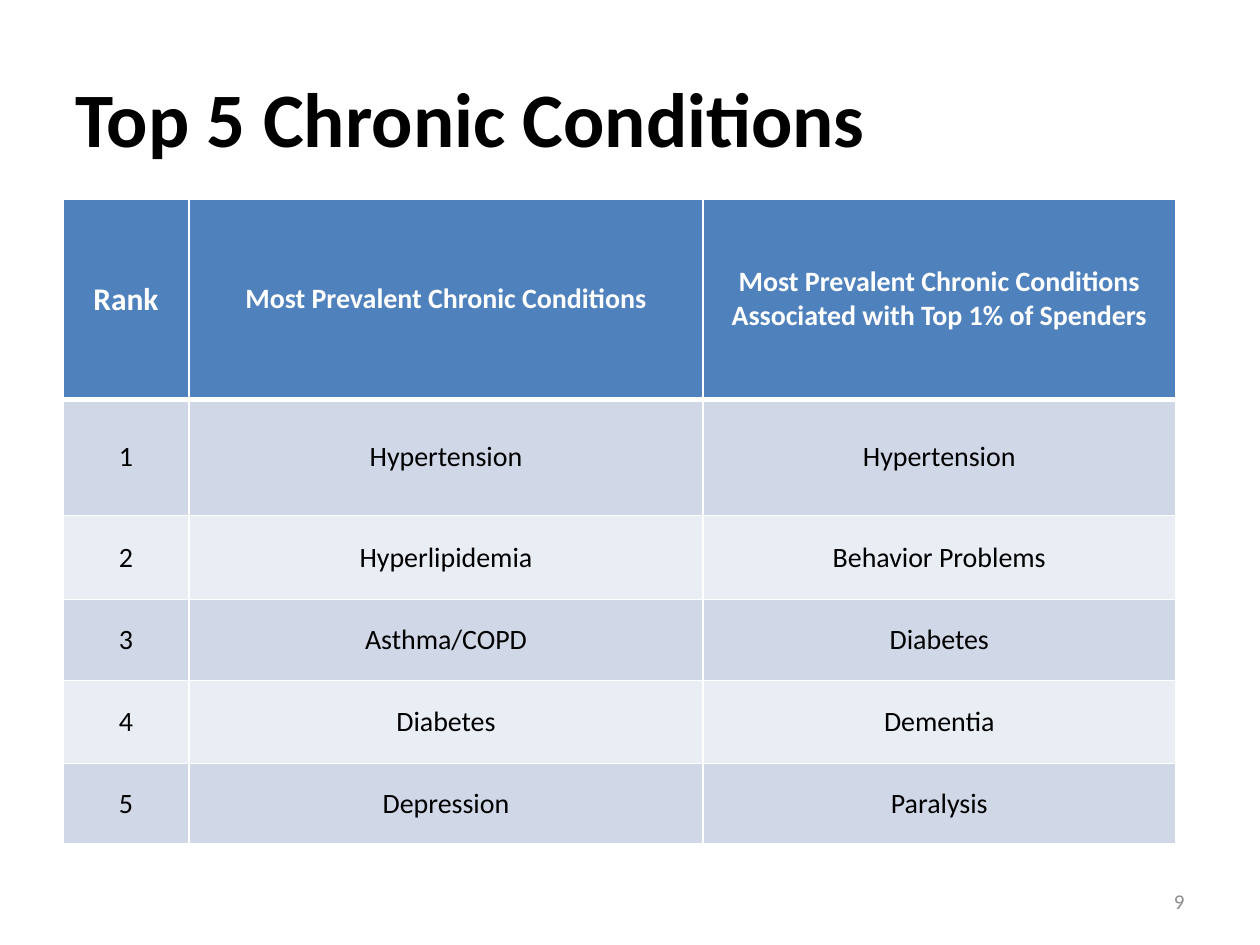
import pptx
import pptx.dml.color
import pptx.enum.text
import pptx.oxml
import pptx.oxml.ns
import pptx.util

Pt = pptx.util.Pt
RGBColor = pptx.dml.color.RGBColor
PP_ALIGN = pptx.enum.text.PP_ALIGN
MIDDLE = pptx.enum.text.MSO_ANCHOR.MIDDLE

BLACK = RGBColor(0x00, 0x00, 0x00)
WHITE = RGBColor(0xFF, 0xFF, 0xFF)
GRAY = RGBColor(0x8C, 0x8C, 0x8C)
HEADER_BLUE = RGBColor(0x4F, 0x81, 0xBD)
BANDS = (RGBColor(0xE9, 0xED, 0xF4), RGBColor(0xD0, 0xD8, 0xE8))

COLUMN_WIDTHS = (72, 293.76, 270)
ROW_HEIGHTS = (114.48, 66.24, 48.24, 46.08, 47.52, 46.08)
CONDITIONS = (
    ("Rank", "Most Prevalent Chronic Conditions",
     "Most Prevalent Chronic Conditions Associated with Top 1% of Spenders"),
    ("1", "Hypertension", "Hypertension"),
    ("2", "Hyperlipidemia", "Behavior Problems"),
    ("3", "Asthma/COPD", "Diabetes"),
    ("4", "Diabetes", "Dementia"),
    ("5", "Depression", "Paralysis"),
)


class SlideBuilder:
    font_name = "Calibri"

    def __init__(self, slide):
        self.slide = slide

    def add_words(self, frame, words, size, color, bold=False, align=PP_ALIGN.LEFT):
        paragraph = frame.paragraphs[0]
        paragraph.alignment = align
        run = paragraph.add_run()
        run.text = words
        run.font.name = self.font_name
        run.font.size = Pt(size)
        run.font.bold = bold
        run.font.color.rgb = color

    def text(self, left, top, width, height, words, size, color, **style):
        box = self.slide.shapes.add_textbox(Pt(left), Pt(top), Pt(width), Pt(height))
        frame = box.text_frame
        frame.word_wrap = True
        frame.vertical_anchor = MIDDLE
        self.add_words(frame, words, size, color, **style)

    def borders(self, cell, top, bottom):
        """Draw white cell borders; top and bottom are widths in points."""
        properties = cell._tc.get_or_add_tcPr()
        for side, width in (("L", 1), ("R", 1), ("T", top), ("B", bottom)):
            properties.append(pptx.oxml.parse_xml(
                f'<a:ln{side} {pptx.oxml.ns.nsdecls("a")} w="{Pt(width)}">'
                f'<a:solidFill><a:srgbClr val="{WHITE}"/></a:solidFill></a:ln{side}>'))

    def table(self, left, top, rows, widths, heights):
        """Build a banded table whose first row is the header."""
        table = self.slide.shapes.add_table(
            len(rows), len(widths), Pt(left), Pt(top),
            Pt(sum(widths)), Pt(sum(heights))).table
        for column, width in zip(table.columns, widths):
            column.width = Pt(width)
        for r, (row, height) in enumerate(zip(rows, heights)):
            table.rows[r].height = Pt(height)
            header = r == 0
            for c, words in enumerate(row):
                cell = table.cell(r, c)
                cell.vertical_anchor = MIDDLE
                self.borders(cell, top=3 if r == 1 else 1, bottom=3 if header else 1)
                cell.fill.solid()
                cell.fill.fore_color.rgb = HEADER_BLUE if header else BANDS[r % 2]
                self.add_words(cell.text_frame, words, 18 if header and c == 0 else 16,
                               WHITE if header else BLACK, bold=header,
                               align=PP_ALIGN.CENTER)


def main():
    deck = pptx.Presentation()
    deck.slide_width, deck.slide_height = Pt(720), Pt(540)
    builder = SlideBuilder(deck.slides.add_slide(deck.slide_layouts[6]))
    builder.text(36, 21.6, 648, 90, "Top 5 Chronic Conditions", 44, BLACK, bold=True)
    builder.table(36, 113.76, CONDITIONS, COLUMN_WIDTHS, ROW_HEIGHTS)
    builder.text(516.24, 500.4, 167.76, 28.8, "9", 12, GRAY, align=PP_ALIGN.RIGHT)
    deck.save("out.pptx")


if __name__ == "__main__":
    main()
